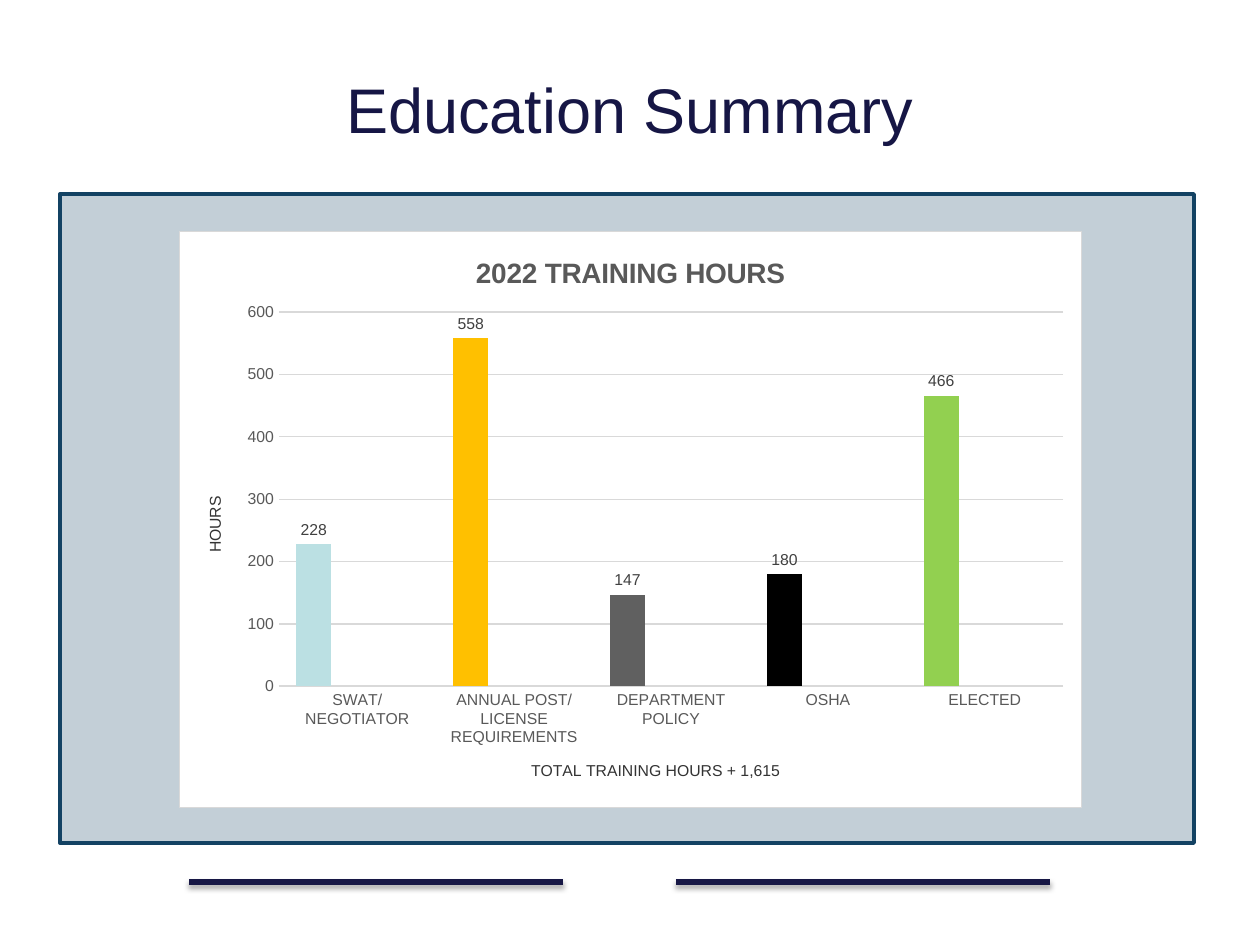
from pptx import Presentation
from pptx.chart.data import CategoryChartData
from pptx.dml.color import RGBColor
from pptx.enum.chart import XL_CHART_TYPE, XL_LABEL_POSITION, XL_TICK_MARK
from pptx.enum.shapes import MSO_CONNECTOR, MSO_SHAPE
from pptx.enum.text import MSO_ANCHOR, PP_ALIGN
from pptx.oxml import parse_xml
from pptx.oxml.ns import nsdecls, qn
from pptx.util import Pt

COLUMN = XL_CHART_TYPE.COLUMN_CLUSTERED
OUTER = XL_LABEL_POSITION.OUTSIDE_END
NO_TICK = XL_TICK_MARK.NONE
RECT = MSO_SHAPE.RECTANGLE
STRAIGHT = MSO_CONNECTOR.STRAIGHT
MIDDLE = MSO_ANCHOR.MIDDLE
CENTER = PP_ALIGN.CENTER

SCALE = 914400 / 126
FONT = "Arial"
COLORS = {
    "title": "161645", "panel": "104263", "edge": "134263", "rule": "171745",
    "grid": "D9D9D9", "white": "FFFFFF", "head": "595959", "tick": "595959",
    "name": "333333", "label": "404040",
}
HOURS = [
    ("SWAT/NEGOTIATOR", 228, "BBE0E3"),
    ("ANNUAL POST/LICENSE REQUIREMENTS", 558, "FFC000"),
    ("DEPARTMENT POLICY", 147, "606060"),
    ("OSHA", 180, "000000"),
    ("ELECTED", 466, "92D050"),
]


def px(*vals):
    return [round(val * SCALE) for val in vals]


def rgb(key):
    return RGBColor.from_string(COLORS.get(key, key))


def style(font, size, color, bold=False):
    font.name, font.size, font.bold = FONT, Pt(size), bold
    font.color.rgb = rgb(color)


def write(frame, text, size, color, bold=False, align=CENTER):
    frame.text = text
    para = frame.paragraphs[0]
    para.alignment = align
    style(para.runs[0].font, size, color, bold)


def add_title(slide, box):
    title = slide.shapes.title
    title.left, title.top, title.width, title.height = px(*box)
    title.text_frame.vertical_anchor = MIDDLE
    write(title.text_frame, "Education Summary", 36, "title")


def add_panel(slide, box):
    panel = slide.shapes.add_shape(RECT, *px(*box))
    panel.shadow.inherit = False
    panel.fill.solid()
    panel.fill.fore_color.rgb = rgb("panel")
    tint = panel.fill._xPr.find(".//" + qn("a:srgbClr"))
    tint.append(parse_xml(f'<a:alpha {nsdecls("a")} val="25000"/>'))
    panel.line.color.rgb = rgb("edge")
    panel.line.width = Pt(2.25)


def add_rules(slide, box, gap):
    """Two equal rules with a gap between them, along the top of the box."""
    left, top, width, _ = box
    span = (width - gap) // 2
    for start in (left, left + span + gap):
        rule = slide.shapes.add_connector(
            STRAIGHT, *px(start, top, start + span, top))
        rule.line.color.rgb = rgb("rule")
        rule.line.width = Pt(3)
        rule._element.spPr.append(parse_xml(
            f'<a:effectLst {nsdecls("a")}><a:outerShdw blurRad="39370" '
            'dist="22860" dir="5400000" rotWithShape="0"><a:srgbClr val="000000">'
            '<a:alpha val="35000"/></a:srgbClr></a:outerShdw></a:effectLst>'))


def set_frame(chart):
    """White chart area with a thin border, and a fixed plot area."""
    area = chart.element.find(qn("c:chart"))
    area.addnext(parse_xml(
        f'<c:spPr {nsdecls("c", "a")}><a:solidFill><a:srgbClr '
        f'val="{COLORS["white"]}"/></a:solidFill><a:ln w="9525"><a:solidFill>'
        f'<a:srgbClr val="{COLORS["grid"]}"/></a:solidFill></a:ln></c:spPr>'))
    plot = area.find(qn("c:plotArea"))
    for old in plot.findall(qn("c:layout")):
        plot.remove(old)
    sizes = "".join(f'<c:{key} val="{val}"/>' for key, val in
                    (("x", 0.11), ("y", 0.14), ("w", 0.87), ("h", 0.65)))
    plot.insert(0, parse_xml(
        f'<c:layout {nsdecls("c")}><c:manualLayout><c:layoutTarget val="inner"/>'
        f'<c:xMode val="edge"/><c:yMode val="edge"/>{sizes}'
        '</c:manualLayout></c:layout>'))


def set_axes(chart):
    cat, val = chart.category_axis, chart.value_axis
    for axis, name in ((cat, "TOTAL TRAINING HOURS + 1,615"), (val, "HOURS")):
        axis.major_tick_mark = axis.minor_tick_mark = NO_TICK
        style(axis.tick_labels.font, 9, "tick")
        write(axis.axis_title.text_frame, name, 9, "name")
    cat.format.line.color.rgb = rgb("grid")
    cat.format.line.width = Pt(1)
    val.format.line.fill.background()
    val.minimum_scale, val.maximum_scale, val.major_unit = 0, 600, 100
    grid = val.major_gridlines.format.line
    grid.color.rgb = rgb("grid")
    grid.width = Pt(0.75)


def set_bars(chart):
    plot = chart.plots[0]
    plot.gap_width, plot.overlap = 100, -24
    plot.vary_by_categories = False
    for series in plot.series:
        labels = series.data_labels
        labels.show_value = True
        labels.position = OUTER
        style(labels.font, 9, "label")
    for num, (_, _, color) in enumerate(HOURS):
        fill = plot.series[0].points[num].format.fill
        fill.solid()
        fill.fore_color.rgb = rgb(color)


def add_hours(slide, box):
    names, vals, _ = zip(*HOURS)
    data = CategoryChartData()
    data.categories = names
    data.add_series("Series 1", vals)
    for num in (2, 3):
        data.add_series(f"Series {num}", [None] * len(names))
    chart = slide.shapes.add_chart(COLUMN, *px(*box), data).chart
    chart.has_legend = False
    style(chart.font, 10, "000000")
    chart.has_title = True
    write(chart.chart_title.text_frame, "2022 TRAINING HOURS", 16, "head", bold=True)
    chart.chart_title.include_in_layout = False
    set_frame(chart)
    set_axes(chart)
    set_bars(chart)


def main():
    deck = Presentation()
    deck.slide_width, deck.slide_height = px(1260, 945)
    slide = deck.slides.add_slide(deck.slide_layouts[5])
    add_panel(slide, (60, 194, 1134, 649))
    add_rules(slide, (189, 882, 861, 0), gap=113)
    add_title(slide, (63, 38, 1134, 141))
    add_hours(slide, (179, 231, 903, 577))
    deck.save("out.pptx")


if __name__ == "__main__":
    main()
